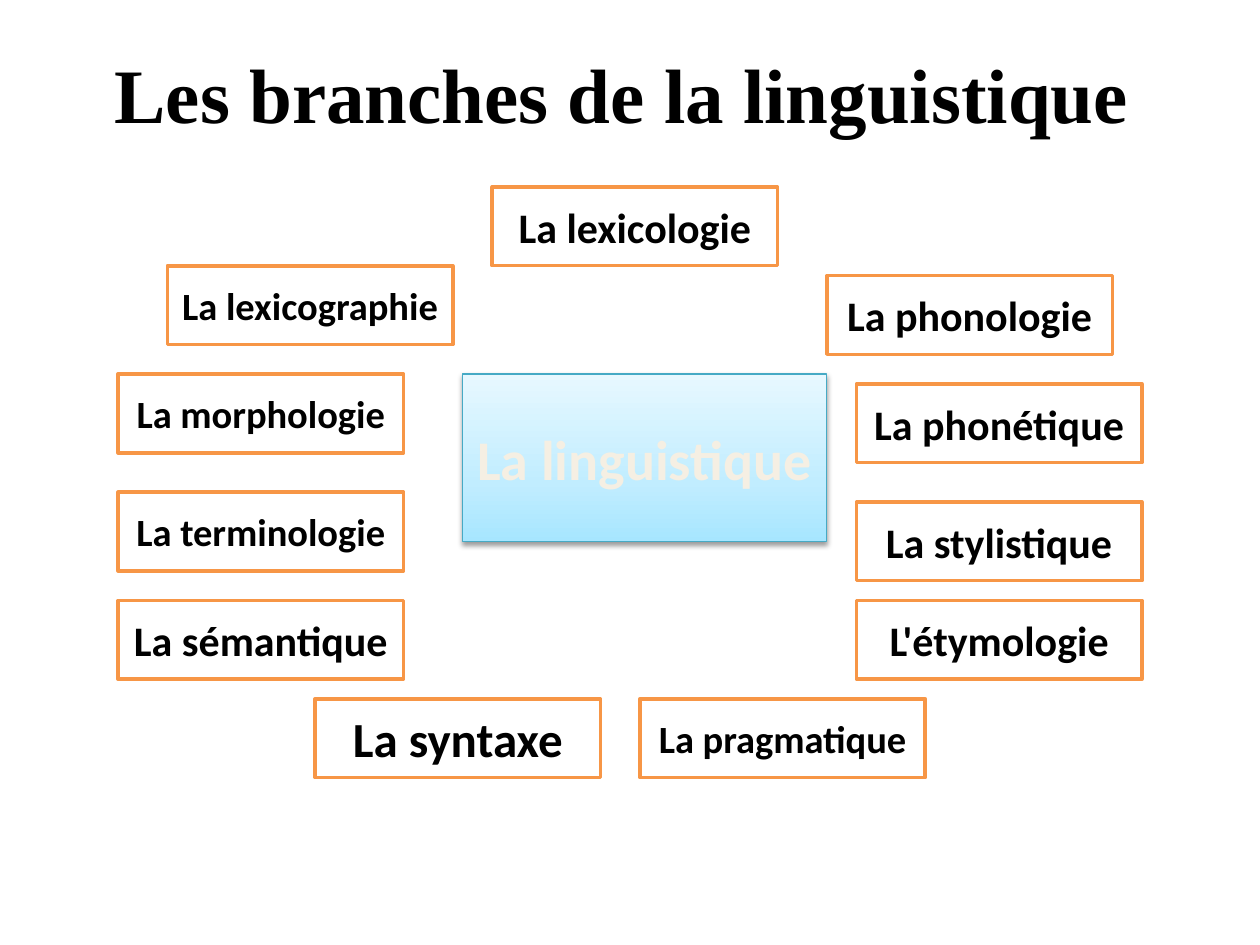
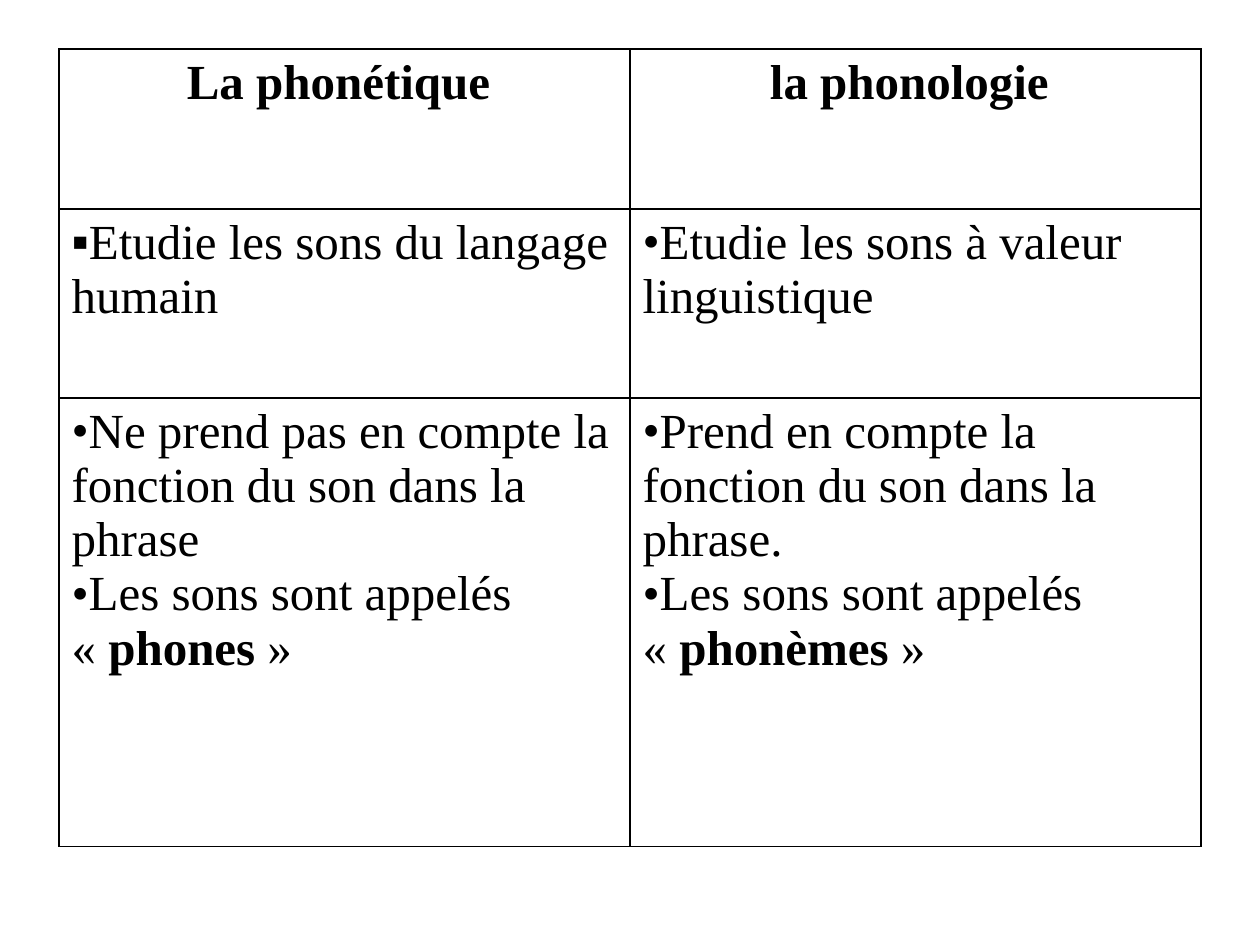
import copy

import pptx
import pptx.dml.color
import pptx.enum.shapes
import pptx.enum.text
import pptx.oxml
import pptx.oxml.ns
import pptx.util
from lxml import etree

COLUMNS, ROWS = 128, 96
BRANCH_WIDTH, BRANCH_HEIGHT = 29, 8
TITLE_ONLY, BLANK = 5, 6
SERIF, SANS = "Times New Roman", "Calibri"
BLACK, WHITE, ORANGE = "000000", "FFFFFF", "F79646"
TEAL, CREAM = "46AAC5", "F5EFE3"
SKY = [(0, "A7E6FF"), (0.35, "C1EDFF"), (1, "E7F8FF")]
CENTER = pptx.enum.text.PP_ALIGN.CENTER
LEFT = pptx.enum.text.PP_ALIGN.LEFT
NO_BREAK = chr(160)

BRANCHES = [
    ("La lexicologie", 50, 19, 24),
    ("La lexicographie", 17, 27, 22),
    ("La morphologie", 12, 38, 22),
    ("La terminologie", 12, 50, 22),
    ("La sémantique", 12, 61, 24),
    ("La phonologie", 84, 28, 24),
    ("La phonétique", 87, 39, 24),
    ("La stylistique", 87, 51, 24),
    ("L'étymologie", 87, 61, 24),
    ("La pragmatique", 65, 71, 22),
    ("La syntaxe", 32, 71, 28),
]


def sounds_called(term):
    return "•", f"Les sons sont appelés «{NO_BREAK}*{term}*{NO_BREAK}»"


COMPARISON = [
    [[("", "*La phonétique *")], [("", "*la phonologie *")]],
    [
        [("▪", "Etudie les sons du langage humain")],
        [("•", "Etudie les sons à valeur linguistique")],
    ],
    [
        [
            ("•", "Ne prend pas en compte la fonction du son dans la phrase"),
            sounds_called("phones"),
        ],
        [
            ("•", "Prend en compte la fonction du son dans la phrase."),
            sounds_called("phonèmes"),
        ],
    ],
]


def color(code):
    return pptx.dml.color.RGBColor.from_string(code)


def add_xml(parent, tag, **attributes):
    return etree.SubElement(parent, pptx.oxml.ns.qn(tag), attributes)


class Deck:
    def __init__(self):
        self.presentation = pptx.Presentation()
        self.presentation.slide_width = pptx.util.Inches(10)
        self.presentation.slide_height = pptx.util.Inches(7.5)
        self.slide = None

    def new_slide(self, layout):
        layouts = self.presentation.slide_layouts
        self.slide = self.presentation.slides.add_slide(layouts[layout])

    def across(self, columns):
        return round(self.presentation.slide_width * columns / COLUMNS)

    def down(self, rows):
        return round(self.presentation.slide_height * rows / ROWS)

    def area(self, left, top, width, height):
        return self.across(left), self.down(top), self.across(width), self.down(height)

    def style(self, paragraph, face, size, ink=BLACK, bold=None, align=CENTER):
        paragraph.alignment = align
        font = paragraph.font
        font.name, font.size, font.bold = face, pptx.util.Pt(size), bold
        font.color.rgb = color(ink)

    def title(self, text, *place):
        heading = self.slide.shapes.title
        heading.left, heading.top, heading.width, heading.height = self.area(*place)
        heading.text_frame.text = text
        heading.text_frame.vertical_anchor = pptx.enum.text.MSO_ANCHOR.MIDDLE
        self.style(heading.text_frame.paragraphs[0], SERIF, 44, bold=True)

    def box(self, text, place, size, ink, edge, edge_width):
        rectangle = pptx.enum.shapes.MSO_SHAPE.RECTANGLE
        box = self.slide.shapes.add_shape(rectangle, *self.area(*place))
        box.shadow.inherit = False
        box.fill.solid()
        box.fill.fore_color.rgb = color(WHITE)
        box.line.color.rgb = color(edge)
        box.line.width = pptx.util.Pt(edge_width)
        frame = box.text_frame
        frame.word_wrap = False
        frame.vertical_anchor = pptx.enum.text.MSO_ANCHOR.MIDDLE
        frame.text = text
        self.style(frame.paragraphs[0], SANS, size, ink, True)
        return box

    def branch(self, text, left, top, size):
        place = (left, top, BRANCH_WIDTH, BRANCH_HEIGHT)
        self.box(text, place, size, BLACK, ORANGE, 2)

    def core(self, text, *place):
        core = self.box(text, place, 32, CREAM, TEAL, 0.75)
        core.fill.gradient()
        core.fill.gradient_angle = 90
        properties = core._element.spPr
        stops = properties.find(".//" + pptx.oxml.ns.qn("a:gsLst"))
        stops.append(copy.deepcopy(stops[0]))
        for stop, (position, code) in zip(core.fill.gradient_stops, SKY):
            stop.position = position
            stop.color.rgb = color(code)
        effects = properties.find(pptx.oxml.ns.qn("a:effectLst"))
        shadow = add_xml(
            effects, "a:outerShdw",
            blurRad=str(pptx.util.Pt(3.1)), dist=str(pptx.util.Pt(1.6)),
            dir="5400000", rotWithShape="0",
        )
        add_xml(add_xml(shadow, "a:srgbClr", val=BLACK), "a:alpha", val="38000")

    def bullet(self, paragraph, mark):
        properties = paragraph._p.pPr
        face = add_xml(properties, "a:buFont", typeface=SERIF)
        sign = add_xml(properties, "a:buChar", char=mark)
        properties.insert(0, face)
        properties.insert(1, sign)

    def cell(self, cell, lines):
        cell.fill.solid()
        cell.fill.fore_color.rgb = color(WHITE)
        frame = cell.text_frame
        for index, (mark, text) in enumerate(lines):
            paragraph = frame.add_paragraph() if index else frame.paragraphs[0]
            self.style(paragraph, SERIF, 28, align=LEFT if mark else CENTER)
            for part, words in enumerate(text.split("*")):
                if words:
                    run = paragraph.add_run()
                    run.text = words
                    run.font.bold = part % 2 == 1
            if mark:
                self.bullet(paragraph, mark)
        self.borders(cell)

    def borders(self, cell):
        properties = cell._tc.get_or_add_tcPr()
        for index, side in enumerate(("a:lnL", "a:lnR", "a:lnT", "a:lnB")):
            edge = add_xml(properties, side, w=str(pptx.util.Pt(1)))
            add_xml(add_xml(edge, "a:solidFill"), "a:srgbClr", val=BLACK)
            properties.insert(index, edge)

    def table(self, content, left, top, widths, heights):
        place = self.area(left, top, sum(widths), sum(heights))
        table = self.slide.shapes.add_table(len(heights), len(widths), *place).table
        table.first_row = table.horz_banding = False
        for column, width in zip(table.columns, widths):
            column.width = self.across(width)
        for row, height, cells in zip(table.rows, heights, content):
            row.height = self.down(height)
            for cell, lines in zip(row.cells, cells):
                self.cell(cell, lines)


def main():
    deck = Deck()
    deck.new_slide(TITLE_ONLY)
    deck.title("Les branches de la linguistique", 6.4, 3.84, 113.6, 11.14)
    deck.core("La linguistique", 47, 38, 37, 17)
    for branch in BRANCHES:
        deck.branch(*branch)

    deck.new_slide(BLANK)
    deck.table(COMPARISON, 6, 5, [58, 58], [16.25, 19.2, 45.55])
    deck.presentation.save("out.pptx")


if __name__ == "__main__":
    main()
